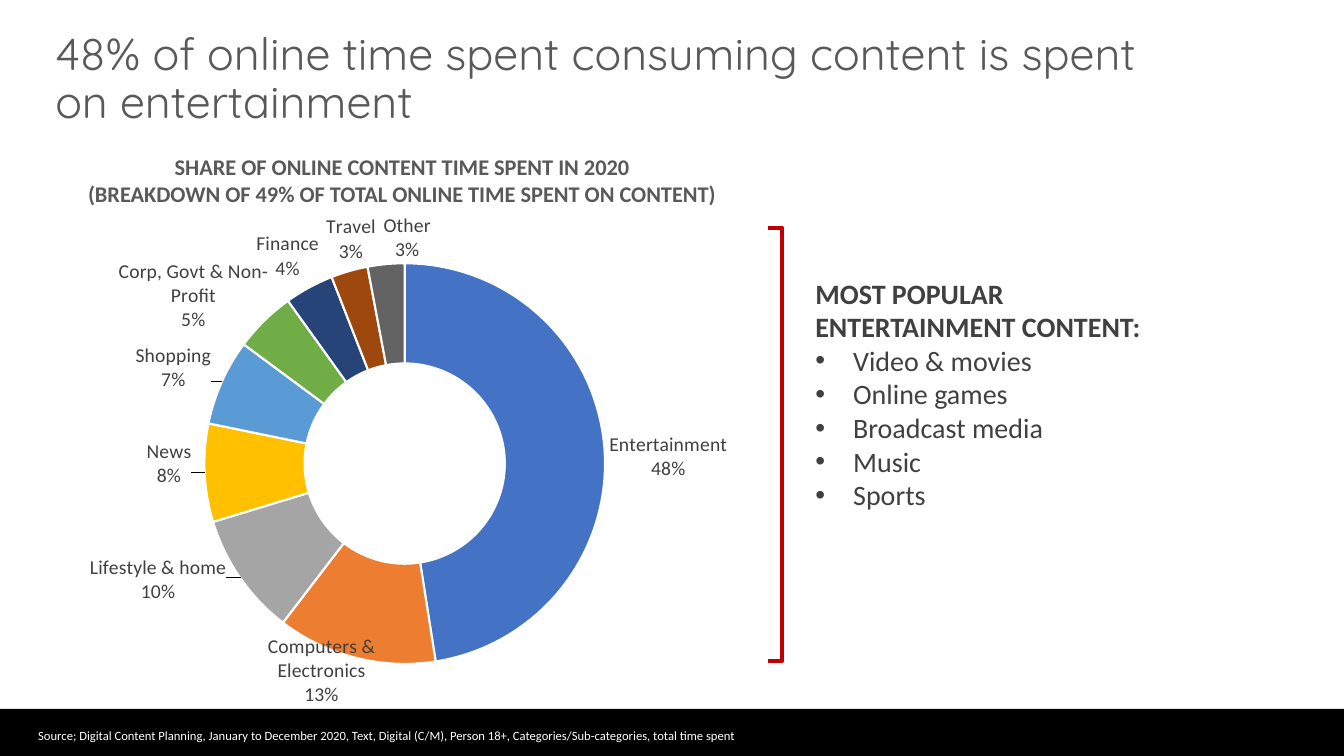
from copy import deepcopy
from math import cos, radians, sin

from lxml import etree
from pptx import Presentation
from pptx.chart.data import CategoryChartData as ChartData
from pptx.dml.color import RGBColor as RGB
from pptx.enum.chart import XL_CHART_TYPE as Kind
from pptx.enum.shapes import MSO_SHAPE as Shape
from pptx.enum.text import MSO_ANCHOR as Anchor, PP_ALIGN as Align
from pptx.oxml import parse_xml as parse
from pptx.oxml.ns import qn
from pptx.util import Pt

INK = {"black": "000000", "white": "FFFFFF", "grey": "595959",
       "dark": "404040", "red": "C00000"}
NS = 'xmlns:c="http://schemas.openxmlformats.org/drawingml/2006/chart"'


def add_text(box, lines, size, ink, bold=False, face="Calibri"):
    area = slide.shapes.add_textbox(*map(Pt, box)).text_frame
    area.word_wrap = True
    area.text = "\n".join(lines)
    for para in area.paragraphs:
        font = para.runs[0].font
        font.name, font.size, font.bold = face, Pt(size), bold
        font.color.rgb = RGB.from_string(INK[ink])
    return area


def make_layout(**parts):
    tags = "".join(f'<c:{tag} val="{val}"/>' for tag, val in parts.items())
    return parse(f"<c:layout {NS}><c:manualLayout>{tags}</c:manualLayout></c:layout>")


deck = Presentation()
deck.slide_width, deck.slide_height = Pt(960), Pt(540)
slide = deck.slides.add_slide(deck.slide_layouts[6])

bar = slide.shapes.add_shape(Shape.RECTANGLE, Pt(0), Pt(506.4), Pt(960), Pt(33.6))
bar.shadow.inherit = False
bar.fill.solid()
bar.fill.fore_color.rgb = RGB.from_string(INK["black"])
bar.line.fill.background()

head = add_text((-0.7, 105.8, 576, 46), [
    "SHARE OF ONLINE CONTENT TIME SPENT IN 2020",
    "(BREAKDOWN OF 49% OF TOTAL ONLINE TIME SPENT ON CONTENT)",
], 16, "grey", True)
for para in head.paragraphs:
    para.alignment = Align.CENTER

title = add_text((32.4, 7.2, 821.5, 100), [
    "48% of online time spent consuming content is spent on entertainment",
], 32, "grey", face="Quicksand")
title.vertical_anchor = Anchor.MIDDLE
title.paragraphs[0].line_spacing = 0.9

brace = slide.shapes.add_shape(Shape.RIGHT_BRACKET, Pt(548.6), Pt(162.7), Pt(10), Pt(309.6))
brace.shadow.inherit = False
brace.adjustments[0] = 0
brace.fill.background()
brace.line.color.rgb = RGB.from_string(INK["red"])
brace.line.width = Pt(3)

top = add_text((575.3, 193.7, 290, 220), [
    "MOST POPULAR ENTERTAINMENT CONTENT:", "Video & movies", "Online games",
    "Broadcast media", "Music", "Sports",
], 20, "dark", True)
for para in top.paragraphs[1:]:
    props = para._p.get_or_add_pPr()
    props.set("marL", str(Pt(27)))
    props.set("indent", str(-Pt(27)))
    etree.SubElement(props, qn("a:buFont")).set("typeface", "Arial")
    etree.SubElement(props, qn("a:buChar")).set("char", "•")
    para.runs[0].font.bold = False

add_text((20.2, 516.2, 566.6, 18), [
    "Source; Digital Content Planning, January to December 2020, Text, Digital (C/M), "
    "Person 18+, Categories/Sub-categories, total time spent",
], 9, "white")

shares = [
    ("Entertainment", 48, "4472C4", 474, 326),
    ("Computers & Electronics", 13, "ED7D31", 228, 479),
    ("Lifestyle & home", 10, "A5A5A5", 112, 413),
    ("News", 8, "FFC000", 120, 331),
    ("Shopping", 7, "5B9BD5", 123, 263),
    ("Corp, Govt & Non-Profit", 5, "70AD47", 137, 212),
    ("Finance", 4, "264478", 204, 184),
    ("Travel", 3, "9E480E", 249, 172),
    ("Other", 3, "636363", 289, 171),
]
data = ChartData()
data.categories = [row[0] for row in shares]
data.add_series("Series 1", [row[1] for row in shares])
wide, high = 572.4, 369.4
chart = slide.shapes.add_chart(
    Kind.DOUGHNUT, Pt(2.9), Pt(135.4), Pt(wide), Pt(high), data).chart
chart.has_title = chart.has_legend = False
chart.font.name, chart.font.size = "Calibri", Pt(10)
chart.font.color.rgb = RGB.from_string(INK["black"])

plot = chart.plots[0]
plot.vary_by_categories = True
area = chart._chartSpace.chart.plotArea
for old in area.findall(qn("c:layout")):
    area.remove(old)
area.insert(0, make_layout(layoutTarget="inner", xMode="edge", yMode="edge",
                           x=0.25, y=0.13, w=0.5, h=0.8))

ring = plot.series[0]
labels = ring.data_labels
labels.show_category_name = labels.show_percentage = True
labels.show_value = False
labels.number_format, labels.number_format_is_linked = "0%", False
labels.font.name, labels.font.size = "Calibri", Pt(14)
labels.font.color.rgb = RGB.from_string(INK["dark"])
root = labels._element
gap = parse(f"<c:separator {NS}>\n</c:separator>")
root.find(qn("c:showBubbleSize")).addnext(gap)
common = [tag for tag in root if tag.tag != qn("c:showLeaderLines")]

total = sum(row[1] for row in shares)
done = 0
for num, (name, share, tint, left, down) in enumerate(shares):
    slice_ = ring.points[num].format
    slice_.fill.solid()
    slice_.fill.fore_color.rgb = RGB.from_string(tint)
    slice_.line.color.rgb = RGB.from_string(INK["white"])
    slice_.line.width = Pt(1.5)

    turn = radians(360 * (done + share / 2) / total)
    done += share
    shift_x = (left - 287 - 106 * sin(turn)) / wide
    shift_y = (down - 331 + 106 * cos(turn)) / high
    label = parse(f'<c:dLbl {NS}><c:idx val="{num}"/></c:dLbl>')
    label.append(make_layout(x=round(shift_x, 4), y=round(shift_y, 4)))
    label.extend(deepcopy(common))
    root.insert(num, label)

deck.save("out.pptx")
